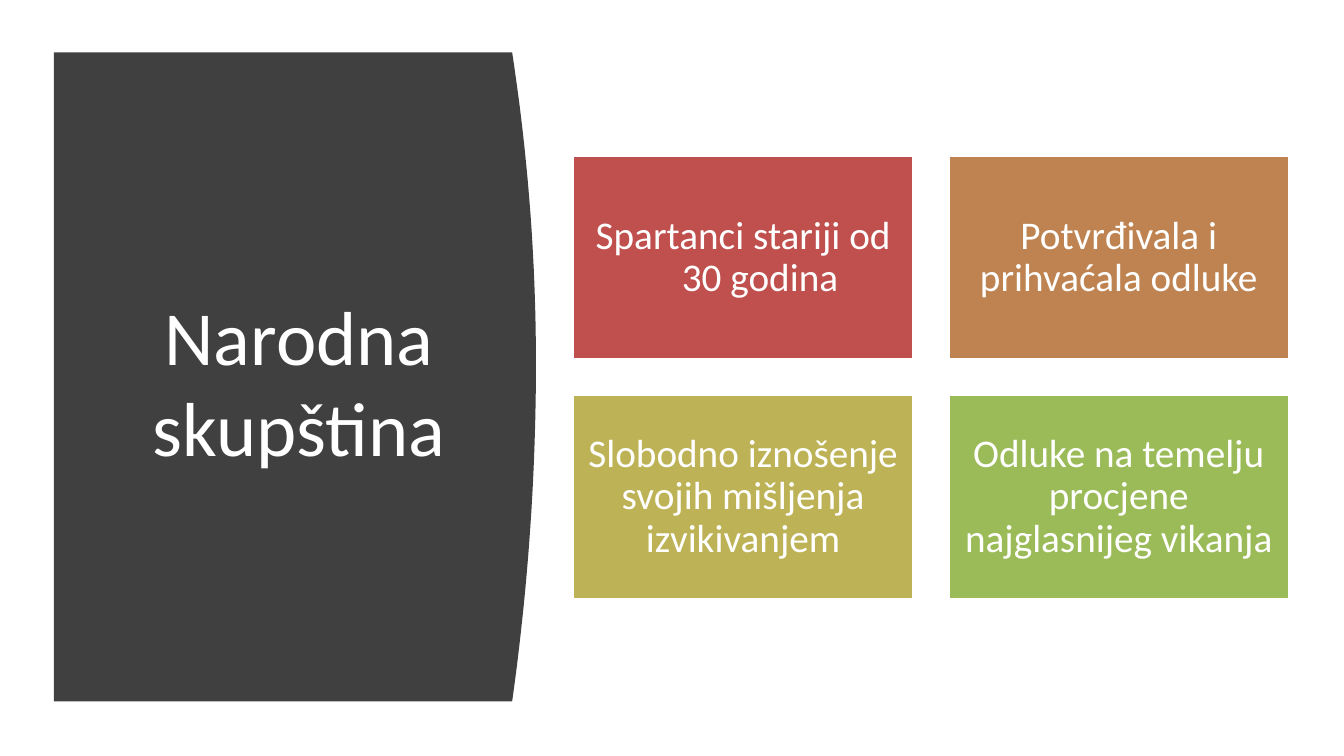
from pptx import Presentation
from pptx import util as u
from pptx.dml.color import RGBColor
from pptx.enum import shapes, text

FONT = "Calibri"
WHITE = "FFFFFF"
CARDS = [
    ("Spartanci stariji od 30 godina", "C0504D"),
    ("Potvrđivala i prihvaćala odluke", "BE8351"),
    ("Slobodno iznošenje svojih mišljenja izvikivanjem", "BDB255"),
    ("Odluke na temelju procjene najglasnijeg vikanja", "9BBB59"),
]
CARD_WIDTH, CARD_HEIGHT, CARD_GAP = 6.45, 3.88, 0.65
GRID_LEFT, GRID_TOP = 10.82, 2.93


def color(hex_value):
    return RGBColor.from_string(hex_value)


def write_centered(shape, content, size):
    frame = shape.text_frame
    frame.word_wrap = True
    frame.auto_size = text.MSO_AUTO_SIZE.NONE
    frame.vertical_anchor = text.MSO_ANCHOR.MIDDLE
    paragraph = frame.paragraphs[0]
    paragraph.alignment = text.PP_ALIGN.CENTER
    run = paragraph.add_run()
    run.text = content
    run.font.name = FONT
    run.font.size = u.Pt(size)
    run.font.color.rgb = color(WHITE)
    return paragraph


def add_curved_panel(slide):
    """Draw the dark panel, whose right side is two half parabolas."""
    left, top, bottom = 1.02, 0.99, 13.26
    edge, bulge, peak = 9.68, 0.45, 6.86
    steps = 48
    points = []
    for step in range(steps + 1):
        y = top + (bottom - top) * step / steps
        reach = peak - top if y < peak else bottom - peak
        x = edge + bulge * (1 - ((y - peak) / reach) ** 2)
        points.append((u.Cm(x), u.Cm(y)))
    points.append((u.Cm(left), u.Cm(bottom)))
    builder = slide.shapes.build_freeform(u.Cm(left), u.Cm(top))
    builder.add_line_segments(points, close=True)
    panel = builder.convert_to_shape()
    panel.shadow.inherit = False
    panel.fill.solid()
    panel.fill.fore_color.rgb = color("404040")
    panel.line.fill.background()


def place_title(slide, content):
    title = slide.shapes.title
    title.left, title.top = u.Cm(1.17), u.Cm(2.2)
    title.width, title.height = u.Cm(8.97), u.Cm(9.98)
    write_centered(title, content, 41)
    # Moved to the end of the tree so that it lies above the panel
    slide.shapes._spTree.append(title._element)


def add_card(slide, left, top, content, fill):
    card = slide.shapes.add_shape(
        shapes.MSO_SHAPE.RECTANGLE,
        u.Cm(left), u.Cm(top), u.Cm(CARD_WIDTH), u.Cm(CARD_HEIGHT),
    )
    card.shadow.inherit = False
    card.fill.solid()
    card.fill.fore_color.rgb = color(fill)
    card.line.color.rgb = color(WHITE)
    card.line.width = u.Pt(2)
    frame = card.text_frame
    frame.margin_left = frame.margin_right = u.Cm(0.23)
    frame.margin_top = frame.margin_bottom = u.Cm(0.23)
    paragraph = write_centered(card, content, 21)
    paragraph.line_spacing = 0.9
    return paragraph


def set_hanging_indent(paragraph, indent):
    properties = paragraph._p.get_or_add_pPr()
    properties.set("marL", str(u.Cm(indent)))
    properties.set("indent", str(-u.Cm(indent)))


def main():
    presentation = Presentation()
    presentation.slide_width = u.Cm(25.4)
    presentation.slide_height = u.Cm(14.29)
    slide = presentation.slides.add_slide(presentation.slide_layouts[5])
    slide.background.fill.solid()
    slide.background.fill.fore_color.rgb = color(WHITE)

    add_curved_panel(slide)
    place_title(slide, "Narodna skupština")
    paragraphs = []
    for index, (content, fill) in enumerate(CARDS):
        row, column = divmod(index, 2)
        left = GRID_LEFT + column * (CARD_WIDTH + CARD_GAP)
        top = GRID_TOP + row * (CARD_HEIGHT + CARD_GAP)
        paragraphs.append(add_card(slide, left, top, content, fill))
    set_hanging_indent(paragraphs[0], 0.64)

    presentation.save("out.pptx")


if __name__ == "__main__":
    main()
